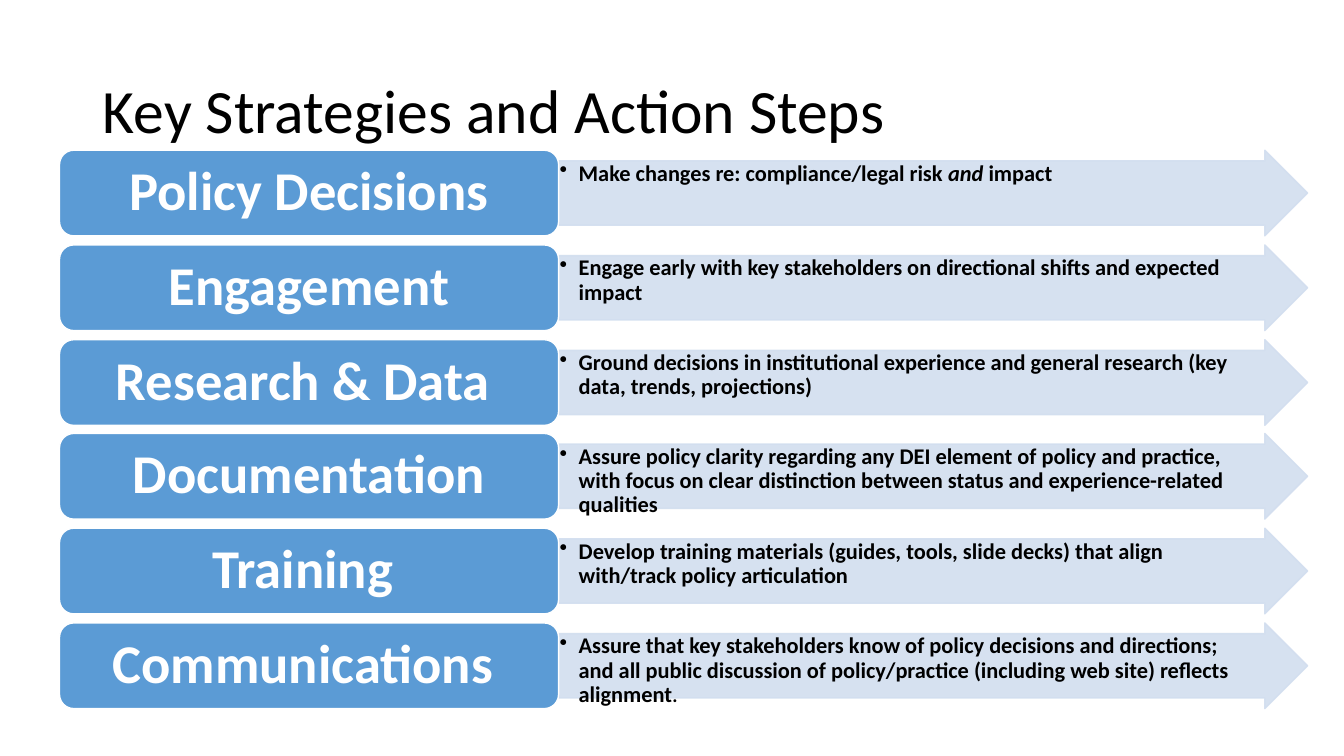
from dataclasses import dataclass

from lxml.etree import SubElement
from pptx import Presentation
from pptx.dml.color import RGBColor
from pptx.enum.shapes import MSO_SHAPE
from pptx.enum.text import MSO_ANCHOR, PP_ALIGN
from pptx.oxml.ns import qn
from pptx.util import Inches, Pt


@dataclass(frozen=True)
class Theme:
    font: str = "Calibri"
    ink: RGBColor = RGBColor.from_string("000000")
    white: RGBColor = RGBColor.from_string("FFFFFF")
    label_fill: RGBColor = RGBColor.from_string("5B9BD5")
    arrow_fill: RGBColor = RGBColor.from_string("D2DEEF")
    arrow_opacity: int = 90
    title_size: int = 44
    label_size: int = 39
    action_size: int = 16
    period_size: int = 14


THEME = Theme()

STRATEGIES = [
    ("Policy Decisions",
     [("Make changes re: compliance/legal risk ", {}), ("and", {"italic": True}),
      (" impact", {})]),
    ("Engagement",
     [("Engage early with key stakeholders on directional shifts and expected impact", {})]),
    ("Research & Data ",
     [("Ground decisions in institutional experience and general research "
       "(key data, trends, projections)", {})]),
    ("Documentation",
     [("Assure policy clarity regarding any DEI element of policy and practice, "
       "with focus on clear distinction between status and experience-related qualities", {})]),
    ("Training ",
     [("Develop training materials (guides, tools, slide decks) that align "
       "with/track policy articulation", {})]),
    ("Communications ",
     [("Assure that key stakeholders know of policy decisions and directions; and all "
       "public discussion of policy/practice (including web site) reflects alignment", {}),
      (".", {"size": THEME.period_size})]),
]

LABEL_LEFT, LABEL_WIDTH = 0.59, 4.95
ARROW_LEFT, ARROW_WIDTH = LABEL_LEFT + LABEL_WIDTH, 7.43
FIRST_TOP, ROW_HEIGHT, ROW_PITCH = 1.49, 0.85, 0.938


def write_text(frame, runs, size, color, bold=False, align=PP_ALIGN.LEFT,
               anchor=MSO_ANCHOR.MIDDLE, insets=(0.1, 0.05, 0.1, 0.05), bullet_indent=None):
    frame.word_wrap = True
    frame.vertical_anchor = anchor
    (frame.margin_left, frame.margin_top,
     frame.margin_right, frame.margin_bottom) = map(Inches, insets)
    paragraph = frame.paragraphs[0]
    paragraph.alignment = align
    paragraph.line_spacing = 0.9
    for words, changes in runs:
        run = paragraph.add_run()
        run.text = words
        run.font.name = THEME.font
        run.font.size = Pt(changes.get("size", size))
        run.font.bold = bold
        run.font.italic = changes.get("italic", False)
        run.font.color.rgb = color
    if bullet_indent:
        properties = paragraph._p.get_or_add_pPr()
        properties.set("marL", str(Inches(bullet_indent)))
        properties.set("indent", str(-Inches(bullet_indent)))
        SubElement(properties, qn("a:buChar"), char="•")


class StrategySlide:
    def __init__(self, presentation, theme):
        self.theme = theme
        self.slide = presentation.slides.add_slide(presentation.slide_layouts[5])
        self.rows = None

    def title(self, words):
        heading = self.slide.shapes.title
        heading.left, heading.top = Inches(0.92), Inches(0.4)
        heading.width, heading.height = Inches(11.5), Inches(1.45)
        write_text(heading.text_frame, [(words, {})], self.theme.title_size, self.theme.ink)

    def block(self, kind, left, top, width, fill, line, opacity=100):
        shape = self.rows.shapes.add_shape(
            kind, Inches(left), Inches(top), Inches(width), Inches(ROW_HEIGHT))
        shape.shadow.inherit = False
        shape.fill.solid()
        shape.fill.fore_color.rgb = fill
        shape.line.color.rgb = line
        shape.line.width = Pt(1)
        if opacity < 100:
            for color in shape._element.spPr.iter(qn("a:srgbClr")):
                SubElement(color, qn("a:alpha"), val=str(opacity * 1000))
        return shape

    def action_arrow(self, top, runs):
        theme = self.theme
        arrow = self.block(MSO_SHAPE.RIGHT_ARROW, ARROW_LEFT, top, ARROW_WIDTH,
                           theme.arrow_fill, theme.arrow_fill, theme.arrow_opacity)
        arrow.adjustments[0] = 0.75
        arrow.adjustments[1] = 0.5
        write_text(arrow.text_frame, runs, theme.action_size, theme.ink, bold=True,
                   anchor=MSO_ANCHOR.TOP, insets=(0.01, 0.01, 0.22, 0.01),
                   bullet_indent=0.19)

    def strategy_label(self, top, words):
        theme = self.theme
        label = self.block(MSO_SHAPE.ROUNDED_RECTANGLE, LABEL_LEFT, top, LABEL_WIDTH,
                           theme.label_fill, theme.white)
        write_text(label.text_frame, [(words, {})], theme.label_size, theme.white,
                   bold=True, align=PP_ALIGN.CENTER, insets=(0.16, 0.08, 0.16, 0.08))

    def strategies(self, entries):
        self.rows = self.slide.shapes.add_group_shape()
        for index, (name, action) in enumerate(entries):
            top = round(FIRST_TOP + index * ROW_PITCH, 2)
            self.action_arrow(top, action)
            self.strategy_label(top, name)


def main():
    presentation = Presentation()
    presentation.slide_width, presentation.slide_height = Inches(13.33), Inches(7.5)
    page = StrategySlide(presentation, THEME)
    page.title("Key Strategies and Action Steps")
    page.strategies(STRATEGIES)
    presentation.save("out.pptx")


if __name__ == "__main__":
    main()
